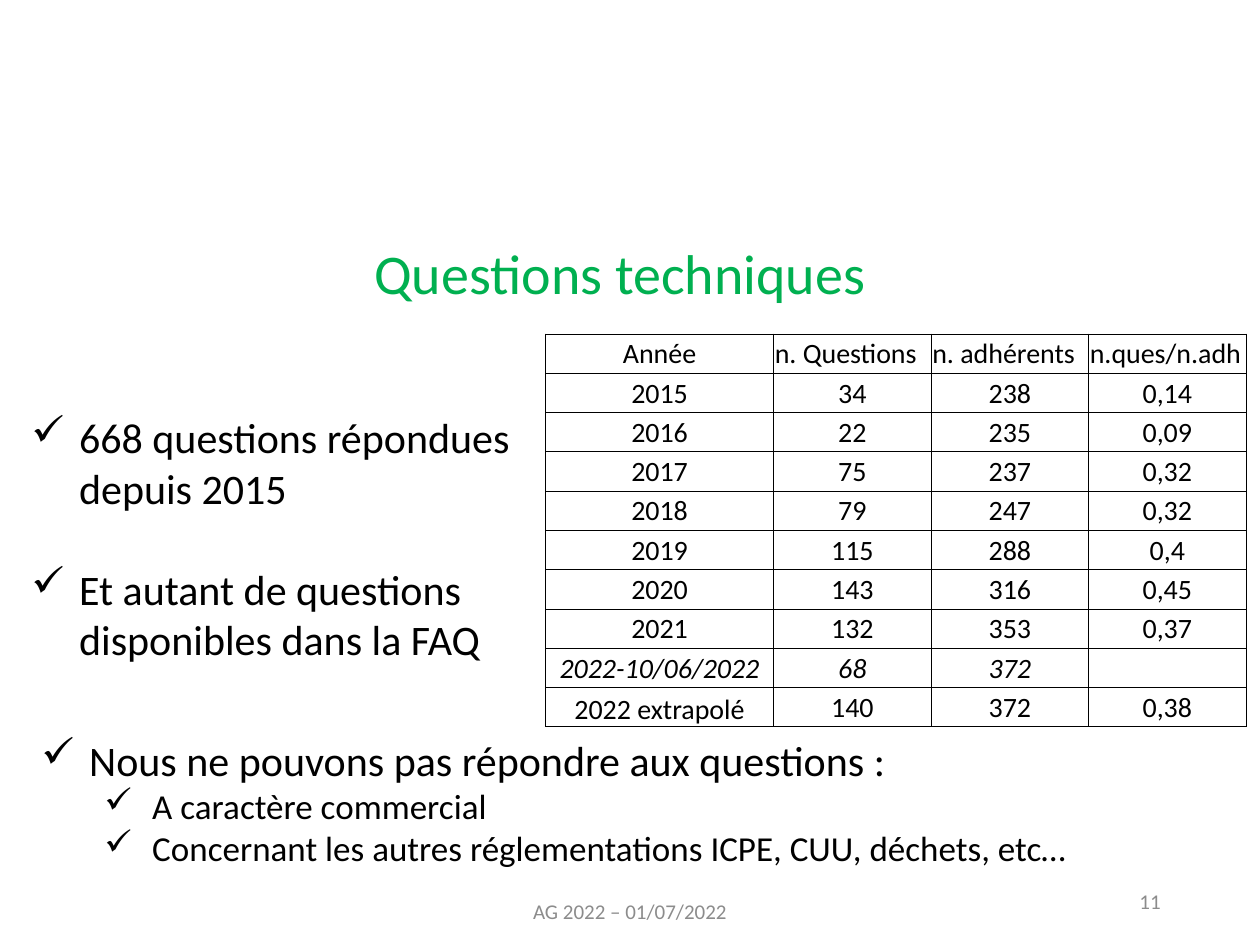
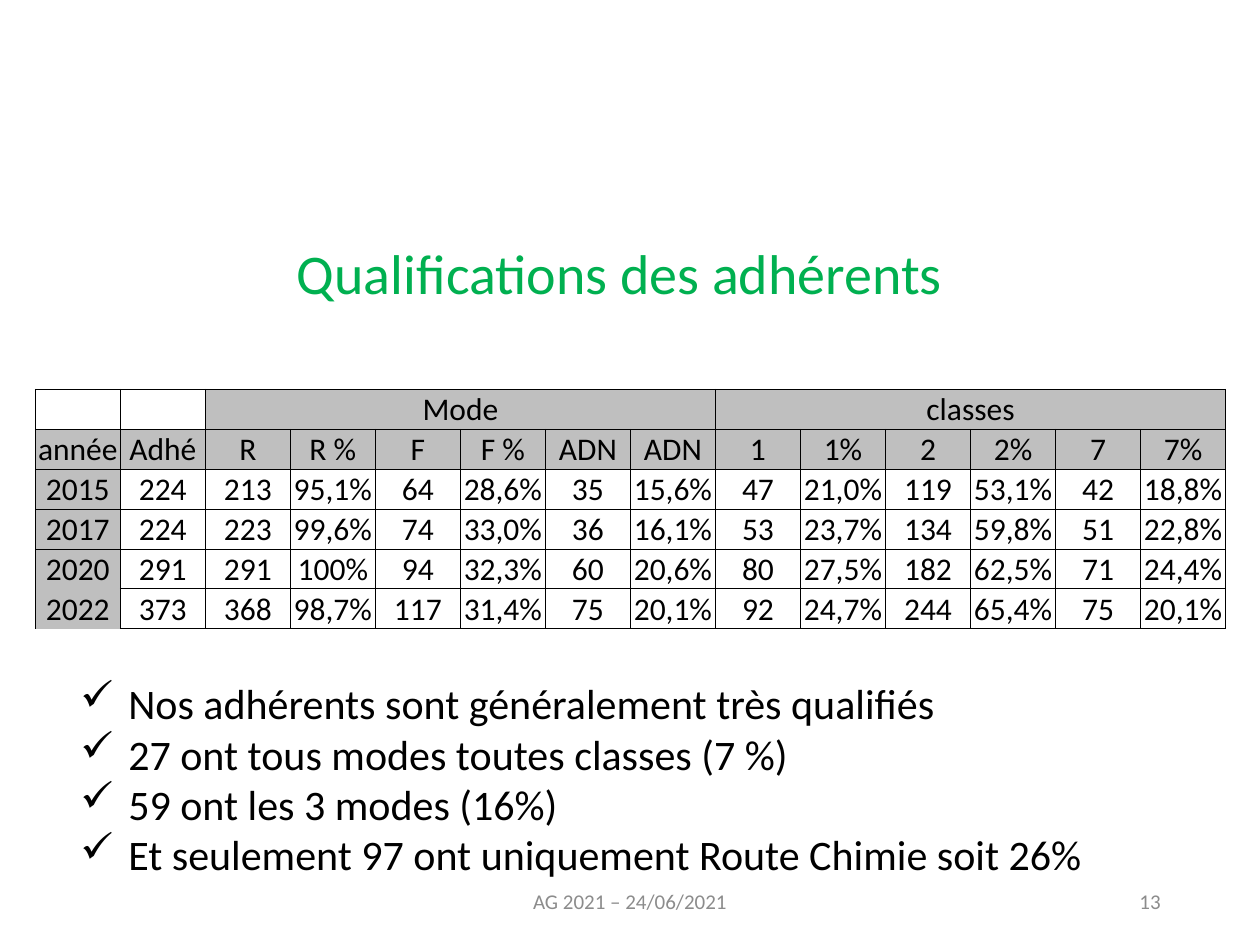
import lxml.etree
import pptx
import pptx.dml.color
import pptx.enum.text
import pptx.oxml.ns
import pptx.util

Inches = pptx.util.Inches
Pt = pptx.util.Pt
ALIGN = pptx.enum.text.PP_ALIGN
ANCHOR = pptx.enum.text.MSO_ANCHOR
qn = pptx.oxml.ns.qn

FONT = "Calibri"
COLORS = {"title": "00B050", "text": "000000", "footer": "8C8C8C", "header": "BFBFBF", "cell": "FFFFFF"}
TITLE_BOX = (1.77, 1.84, 6.3, 0.64)
NUMBER_BOX = (7.06, 6.95, 2.25, 0.4)
HANGING = 0.38
LEVEL_STEP = 0.5
LEVEL_SIZES = (24, 20)
SIDES = ("lnL", "lnR", "lnT", "lnB")

QUESTION_ROWS = [
    ["Année", "n. Questions", "n. adhérents", "n.ques/n.adh"],
    ["2015", "34", "238", "0,14"],
    ["2016", "22", "235", "0,09"],
    ["2017", "75", "237", "0,32"],
    ["2018", "79", "247", "0,32"],
    ["2019", "115", "288", "0,4"],
    ["2020", "143", "316", "0,45"],
    ["2021", "132", "353", "0,37"],
    ["2022-10/06/2022", "68", "372", ""],
    ["2022 extrapolé", "140", "372", "0,38"],
]
QUALIFICATION_ROWS = [
    ["", "", "Mode", "", "", "", "", "", "classes", "", "", "", "", ""],
    ["année", "Adhé", "R", "R %", "F", "F %", "ADN", "ADN", "1", "1%", "2", "2%", "7", "7%"],
    ["2015", "224", "213", "95,1%", "64", "28,6%", "35", "15,6%", "47", "21,0%", "119", "53,1%", "42", "18,8%"],
    ["2017", "224", "223", "99,6%", "74", "33,0%", "36", "16,1%", "53", "23,7%", "134", "59,8%", "51", "22,8%"],
    ["2020", "291", "291", "100%", "94", "32,3%", "60", "20,6%", "80", "27,5%", "182", "62,5%", "71", "24,4%"],
    ["2022", "373", "368", "98,7%", "117", "31,4%", "75", "20,1%", "92", "24,7%", "244", "65,4%", "75", "20,1%"],
]


def style_font(font, size, color, italic=False):
    """Set the shared typeface with a size, colour and slant."""
    font.name = FONT
    font.size = Pt(size)
    font.italic = italic
    font.color.rgb = pptx.dml.color.RGBColor.from_string(COLORS[color])


def add_text_frame(slide, box):
    """Add a wrapping text box and return its text frame."""
    frame = slide.shapes.add_textbox(*map(Inches, box)).text_frame
    frame.word_wrap = True
    return frame


def add_line(slide, box, text, size, color, alignment, anchor=ANCHOR.TOP):
    """Add a text box holding one styled line."""
    frame = add_text_frame(slide, box)
    frame.vertical_anchor = anchor
    paragraph = frame.paragraphs[0]
    paragraph.text = text
    paragraph.alignment = alignment
    style_font(paragraph.font, size, color)


def add_check_list(slide, box, items, gap=0):
    """Add check-marked paragraphs from (level, text) pairs, gap points apart."""
    frame = add_text_frame(slide, box)
    for index, (level, text) in enumerate(items):
        paragraph = frame.add_paragraph() if index else frame.paragraphs[0]
        paragraph.text = text
        paragraph.level = level
        properties = paragraph._p.get_or_add_pPr()
        properties.set("marL", str(Inches(HANGING + level * LEVEL_STEP)))
        properties.set("indent", str(-Inches(HANGING)))
        paragraph.space_before = Pt(gap if index else 0)
        lxml.etree.SubElement(properties, qn("a:buChar"), char="✓")
        style_font(paragraph.font, LEVEL_SIZES[level], "text")


def set_borders(cell, hidden=()):
    """Draw thin black cell borders, except on the hidden sides."""
    properties = cell._tc.get_or_add_tcPr()
    for side in SIDES:
        line = lxml.etree.SubElement(properties, qn(f"a:{side}"), w=str(Pt(0.5)))
        if side in hidden:
            lxml.etree.SubElement(line, qn("a:noFill"))
        else:
            fill = lxml.etree.SubElement(line, qn("a:solidFill"))
            lxml.etree.SubElement(fill, qn("a:srgbClr"), val=COLORS["text"])


def style_cell(cell, text, size, fill="cell", alignment=ALIGN.CENTER, italic=False, hidden=()):
    """Fill in one table cell with its text, borders and background."""
    cell.margin_left = cell.margin_right = cell.margin_top = Inches(0.01)
    cell.margin_bottom = 0
    cell.vertical_anchor = ANCHOR.MIDDLE
    set_borders(cell, hidden)
    cell.fill.solid()
    cell.fill.fore_color.rgb = pptx.dml.color.RGBColor.from_string(COLORS[fill])
    paragraph = cell.text_frame.paragraphs[0]
    paragraph.text = text
    paragraph.alignment = alignment
    style_font(paragraph.font, size, "text", italic)


def add_plain_table(slide, box, rows, widths):
    """Add an unbanded table with equal rows and the given column widths."""
    table = slide.shapes.add_table(len(rows), len(widths), *map(Inches, box)).table
    table.first_row = table.horz_banding = False
    for column, width in zip(table.columns, widths):
        column.width = Inches(width)
    for row in table.rows:
        row.height = Inches(box[3] / len(rows))
    return table


def add_question_table(slide, box):
    """Add the yearly count of technical questions."""
    table = add_plain_table(slide, box, QUESTION_ROWS, [1.81, 1.25, 1.25, 1.25])
    partial_year = len(QUESTION_ROWS) - 2
    for row, values in enumerate(QUESTION_ROWS):
        for column, value in enumerate(values):
            alignment = ALIGN.LEFT if row == 0 and column else ALIGN.CENTER
            style_cell(table.cell(row, column), value, 16, alignment=alignment, italic=row == partial_year)
    table.cell(len(QUESTION_ROWS) - 1, 0).vertical_anchor = ANCHOR.BOTTOM


def add_qualification_table(slide, box):
    """Add the members' qualifications by transport mode and class."""
    count = len(QUALIFICATION_ROWS[0])
    table = add_plain_table(slide, box, QUALIFICATION_ROWS, [box[2] / count] * count)
    open_sides = {(4, 0): ("lnB",), (5, 0): ("lnT", "lnB")}
    for row, values in enumerate(QUALIFICATION_ROWS):
        for column, value in enumerate(values):
            is_header = row == 1 or (row == 0 and column > 1) or (row > 1 and column == 0)
            style_cell(table.cell(row, column), value, 18, "header" if is_header else "cell",
                       hidden=open_sides.get((row, column), ()))
    for first in (2, 8):
        table.cell(0, first).merge(table.cell(0, first + 5))


def add_base_slide(presentation, title, footer, footer_box, number):
    """Add a blank slide with the shared title, footer and number."""
    slide = presentation.slides.add_slide(presentation.slide_layouts[6])
    add_line(slide, TITLE_BOX, title, 32, "title", ALIGN.CENTER)
    add_line(slide, footer_box, footer, 12, "footer", ALIGN.CENTER, ANCHOR.MIDDLE)
    add_line(slide, NUMBER_BOX, number, 12, "footer", ALIGN.RIGHT, ANCHOR.MIDDLE)
    return slide


def build_questions_slide(presentation):
    """Build the slide on technical questions."""
    slide = add_base_slide(presentation, "Questions techniques", "AG 2022 – 01/07/2022",
                           (3.31, 7.12, 3.38, 0.23), "11")
    add_check_list(slide, (0.15, 3.22, 4.06, 2.12), [
        (0, "668 questions répondues depuis 2015"),
        (0, "Et autant de questions disponibles dans la FAQ"),
    ], gap=29)
    add_check_list(slide, (0.23, 5.78, 9.05, 1.18), [
        (0, "Nous ne pouvons pas répondre aux questions :"),
        (1, "A caractère commercial"),
        (1, "Concernant les autres réglementations ICPE, CUU, déchets, etc…"),
    ])
    add_question_table(slide, (4.33, 2.65, 5.56, 3.12))


def build_qualifications_slide(presentation):
    """Build the slide on members' qualifications."""
    slide = add_base_slide(presentation, "Qualifications des adhérents", "AG 2021 – 24/06/2021",
                           (3.31, 6.95, 3.38, 0.4), "13")
    add_qualification_table(slide, (0.28, 3.09, 9.45, 1.9))
    add_check_list(slide, (0.54, 5.33, 8.78, 1.71), [
        (0, "Nos adhérents sont généralement très qualifiés"),
        (0, "27 ont tous modes toutes classes (7 %)"),
        (0, "59 ont les 3 modes (16%)"),
        (0, "Et seulement 97 ont uniquement Route Chimie soit 26%"),
    ])


def main():
    """Build and save the presentation."""
    presentation = pptx.Presentation()
    presentation.slide_width = Inches(10)
    presentation.slide_height = Inches(7.5)
    build_questions_slide(presentation)
    build_qualifications_slide(presentation)
    presentation.save("out.pptx")


if __name__ == "__main__":
    main()
